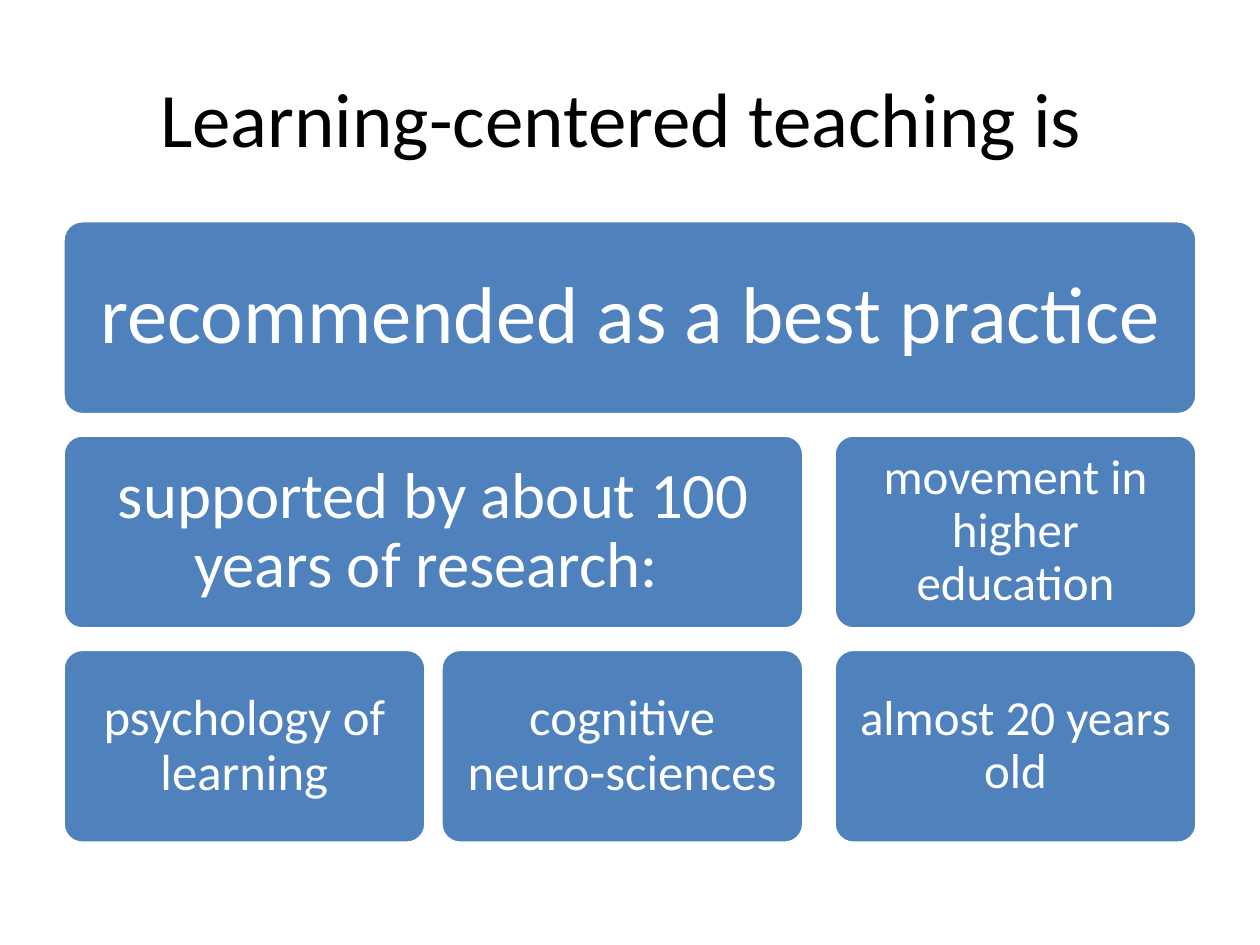
import pptx
import pptx.dml.color
import pptx.enum.shapes
import pptx.enum.text
import pptx.util
from dataclasses import dataclass

Cm, Pt = pptx.util.Cm, pptx.util.Pt
RGB = pptx.dml.color.RGBColor.from_string


@dataclass(frozen=True)
class Theme:
    font: str = "Calibri"
    ink: str = "000000"
    paper: str = "FFFFFF"
    box: str = "4F81BD"
    title: int = 44
    lead: int = 46
    branch: int = 37
    leaf: int = 29
    side: int = 28


THEME = Theme()


def set_text(tf, text, size, color, inset, spacing):
    frame_format = {
        "word_wrap": True,
        "auto_size": pptx.enum.text.MSO_AUTO_SIZE.NONE,
        "vertical_anchor": pptx.enum.text.MSO_ANCHOR.MIDDLE,
        "margin_left": Cm(inset),
        "margin_right": Cm(inset),
        "margin_top": Cm(inset),
        "margin_bottom": Cm(inset),
    }
    for name, value in frame_format.items():
        setattr(tf, name, value)
    p = tf.paragraphs[0]
    p.alignment = pptx.enum.text.PP_ALIGN.CENTER
    p.line_spacing = spacing
    r = p.add_run()
    r.text = text
    for name, value in {"name": THEME.font, "size": Pt(size)}.items():
        setattr(r.font, name, value)
    r.font.color.rgb = RGB(color)


def add_title(s, left, top, width, height, text):
    sp = s.shapes.title
    box = {"left": left, "top": top, "width": width, "height": height}
    for name, value in box.items():
        setattr(sp, name, Cm(value))
    set_text(sp.text_frame, text, THEME.title, THEME.ink, 0.25, 1.0)


def add_box(shapes, left, top, width, height, text, size, inset):
    sp = shapes.add_shape(
        pptx.enum.shapes.MSO_SHAPE.ROUNDED_RECTANGLE,
        Cm(left), Cm(top), Cm(width), Cm(height))
    sp.adjustments[0] = 0.1
    sp.shadow.inherit = False
    sp.fill.solid()
    sp.fill.fore_color.rgb = RGB(THEME.box)
    sp.line.color.rgb = RGB(THEME.paper)
    sp.line.width = Pt(2)
    set_text(sp.text_frame, text, size, THEME.paper, inset, 0.9)


def add_hierarchy(s, left, top, width, height):
    row_gap, leaf_gap, branch_gap = 0.41, 0.3, 0.61
    row = (height - 2 * row_gap) / 3
    leaf = (width - leaf_gap - branch_gap) / 3
    branch = 2 * leaf + leaf_gap
    second = leaf + leaf_gap
    third = branch + branch_gap
    boxes = [
        (0, 0, width, "recommended as a best practice", THEME.lead, 0.48),
        (1, 0, branch, "supported by about 100 years of research: ",
         THEME.branch, 0.38),
        (2, 0, leaf, "psychology of learning", THEME.leaf, 0.3),
        (2, second, leaf, "cognitive neuro-sciences", THEME.leaf, 0.3),
        (1, third, leaf, "movement in higher education", THEME.side, 0.3),
        (2, third, leaf, "almost 20 years old", THEME.side, 0.3),
    ]
    group = s.shapes.add_group_shape()
    for level, x, box_width, text, size, inset in boxes:
        add_box(group.shapes, left + x, top + level * (row + row_gap),
                box_width, row, text, size, inset)


def main():
    prs = pptx.Presentation()
    prs.slide_width, prs.slide_height = Cm(25.4), Cm(19.05)
    s = prs.slides.add_slide(prs.slide_layouts[5])
    add_title(s, 1.27, 0.76, 22.86, 3.18, "Learning-centered teaching is ")
    add_hierarchy(s, 1.27, 4.45, 22.86, 12.55)
    prs.save("out.pptx")


if __name__ == "__main__":
    main()
